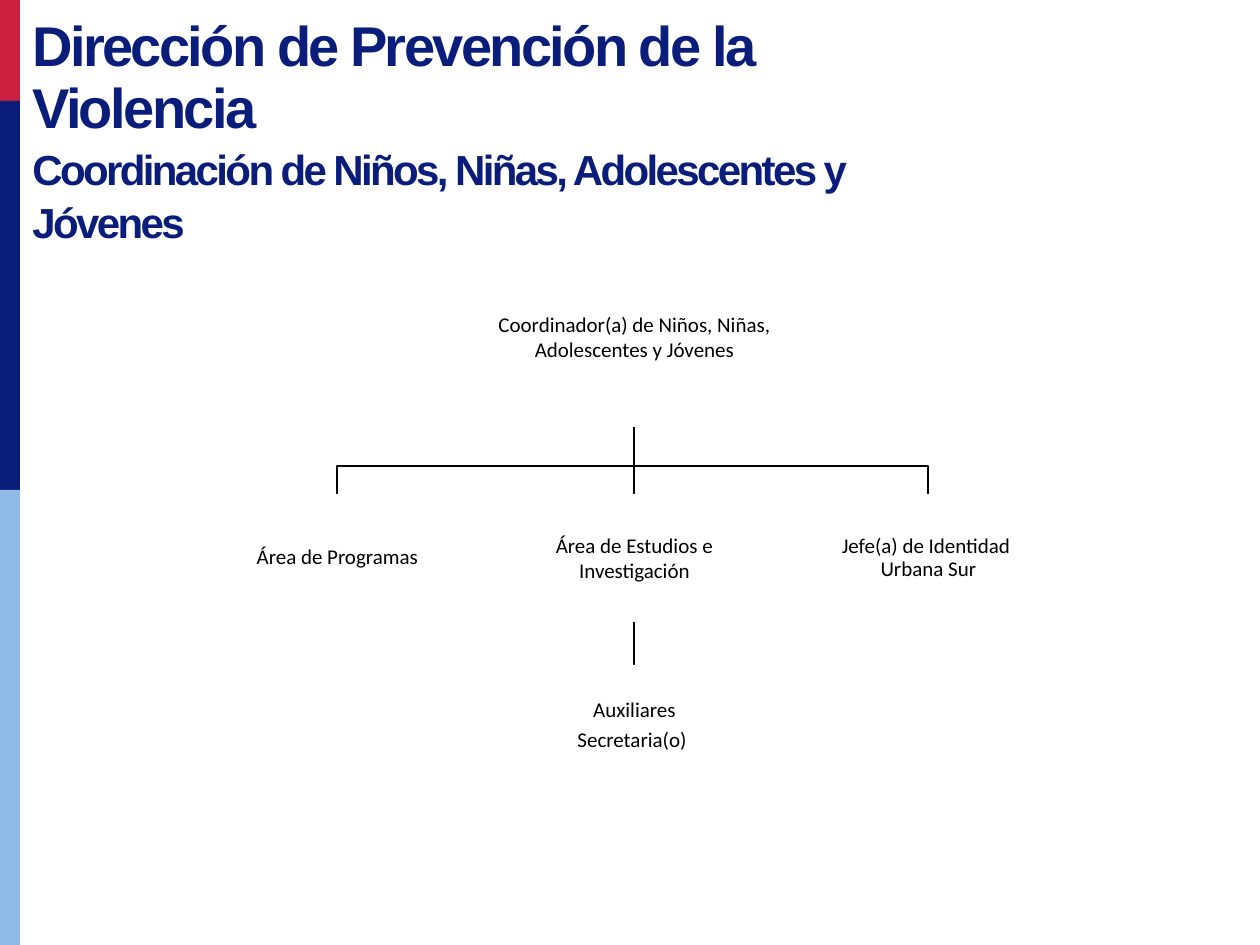
from lxml import etree
from pptx import Presentation
from pptx.dml.color import RGBColor
from pptx.enum.shapes import MSO_CONNECTOR, MSO_SHAPE
from pptx.enum.text import MSO_ANCHOR, PP_ALIGN
from pptx.oxml.ns import qn
from pptx.util import Pt

PX = 914400 // 126
RED = RGBColor(0xCA, 0x1F, 0x3D)
NAVY = RGBColor(0x0A, 0x1D, 0x7A)
SKY = RGBColor(0x8F, 0xBA, 0xE5)
WHITE = RGBColor(0xFF, 0xFF, 0xFF)
BLACK = RGBColor(0, 0, 0)
RECT = MSO_SHAPE.RECTANGLE
STRAIGHT = MSO_CONNECTOR.STRAIGHT
MIDDLE = MSO_ANCHOR.MIDDLE
CENTER = PP_ALIGN.CENTER

TITLE_FONT = {"name": "Arial", "bold": True}
BOX_FONT = {"name": "Calibri", "size": Pt(12)}

BAR_WIDTH = 20
BARS = [(0, 101, RED), (101, 490, NAVY), (490, 945, SKY)]

AXIS = 634
HEAD_TOP, HEAD_BOTTOM = 270, 427
BRANCH = 466
AREA_TOP, AREA_BOTTOM = 494, 622
STAFF_TOP, STAFF_BOTTOM = 665, 816
HEAD_WIDTH, AREA_WIDTH = 315, 241
AREAS = [
    (337, "Área de Programas", 0.9),
    (AXIS, "Área de Estudios e Investigación", 1.0),
    (928, "Jefe(a) de Identidad \vUrbana Sur", 0.9),
]


def px(*values):
    return [v * PX for v in values]


def set_format(obj, values):
    for name, value in values.items():
        setattr(obj, name, value)


def style_font(font, values, color):
    set_format(font, values)
    font.color.rgb = color


def add_rect(s, x, y, w, h, color):
    sp = s.shapes.add_shape(RECT, *px(x, y, w, h))
    sp.shadow.inherit = False
    sp.fill.solid()
    sp.fill.fore_color.rgb = color
    sp.line.fill.background()
    return sp


def add_title(s, lines):
    tf = s.shapes.add_textbox(*px(20, 10, 950, 125)).text_frame
    tf.word_wrap = True
    for i, (text, size, spacing) in enumerate(lines):
        p = tf.add_paragraph() if i else tf.paragraphs[0]
        p.line_spacing = spacing
        r = p.add_run()
        r.text = text
        style_font(r.font, {**TITLE_FONT, "size": Pt(size)}, NAVY)
        r.font._element.set("spc", "-150")


def add_box(s, center, top, width, bottom, lines, spacing=1.0, pad=1):
    sp = add_rect(s, center - width // 2, top, width, bottom - top, WHITE)
    tf = sp.text_frame
    set_format(tf, {
        "word_wrap": True, "vertical_anchor": MIDDLE,
        "margin_left": PX, "margin_right": PX,
        "margin_top": PX, "margin_bottom": pad * PX,
    })
    for i, text in enumerate(lines):
        p = tf.add_paragraph() if i else tf.paragraphs[0]
        p.text = text
        set_format(p, {"alignment": CENTER, "line_spacing": spacing})
        if i:
            p.space_before = Pt(4)
        style_font(p.font, BOX_FONT, BLACK)


def style_line(line):
    line.color.rgb = BLACK
    line.width = Pt(1)


def add_vertical(s, x, top, bottom):
    c = s.shapes.add_connector(STRAIGHT, *px(x, top, x, bottom))
    style_line(c.line)
    etree.SubElement(c._element.spPr, qn("a:effectLst"))


def add_elbow(s, x):
    fb = s.shapes.build_freeform(AXIS, HEAD_BOTTOM, scale=PX)
    fb.add_line_segments([(AXIS, BRANCH), (x, BRANCH), (x, AREA_TOP)], close=False)
    sp = fb.convert_to_shape()
    sp.shadow.inherit = False
    sp.fill.background()
    style_line(sp.line)


def main():
    prs = Presentation()
    prs.slide_width, prs.slide_height = px(1260, 945)
    s = prs.slides.add_slide(prs.slide_layouts[6])

    for top, bottom, color in BARS:
        add_rect(s, 0, top, BAR_WIDTH, bottom - top, color)
    add_title(s, [
        ("Dirección de Prevención de la Violencia", 32, 0.93),
        ("Coordinación de Niños, Niñas, Adolescentes y Jóvenes", 24, 1.05),
    ])

    for center, _, _ in AREAS:
        if center == AXIS:
            add_vertical(s, AXIS, HEAD_BOTTOM, AREA_TOP)
        else:
            add_elbow(s, center)
    add_vertical(s, AXIS, AREA_BOTTOM, STAFF_TOP)

    add_box(s, AXIS, HEAD_TOP, HEAD_WIDTH, HEAD_BOTTOM,
            ["Coordinador(a) de Niños, Niñas, Adolescentes y Jóvenes"], pad=25)
    for center, text, spacing in AREAS:
        add_box(s, center, AREA_TOP, AREA_WIDTH, AREA_BOTTOM, [text], spacing)
    add_box(s, AXIS, STAFF_TOP, AREA_WIDTH, STAFF_BOTTOM,
            ["Auxiliares", "Secretaria(o) "], 0.9, pad=31)

    prs.save("out.pptx")


if __name__ == "__main__":
    main()
